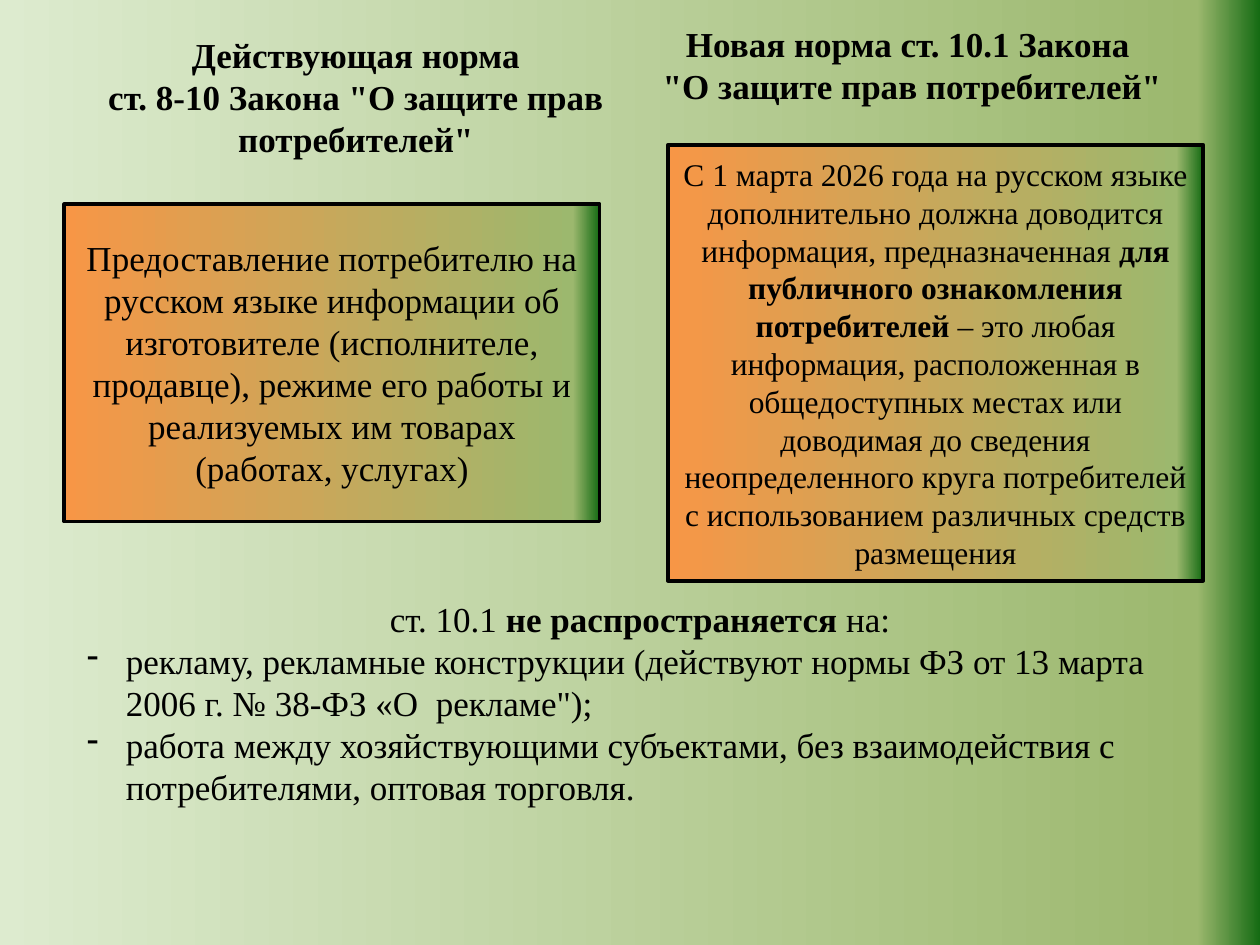
from lxml import etree
from pptx import Presentation
from pptx.dml.color import RGBColor
from pptx.enum.shapes import MSO_SHAPE
from pptx.enum.text import MSO_ANCHOR, PP_ALIGN
from pptx.oxml.ns import qn
from pptx.util import Inches, Pt

RECTANGLE = MSO_SHAPE.RECTANGLE
MIDDLE = MSO_ANCHOR.MIDDLE
CENTER, LEFT = PP_ALIGN.CENTER, PP_ALIGN.LEFT
FONT = "Times New Roman"
BLACK = "000000"
GRID = Inches(0.1)
INDENT = Inches(0.31)
SLIDE_STARTS, CARD_STARTS = "DDEBCF", "F79646"


def color(value):
    """Turn a hex string into a colour."""
    return RGBColor.from_string(value)


def place(box):
    """Turn grid columns and rows into slide lengths."""
    return [round(GRID * cells) for cells in box]


def fill_gradient(fill, owner, start):
    """Fade from the start colour through olive to dark green at the right edge."""
    fill.gradient()
    fill.gradient_angle = 0
    stops = owner.find(".//" + qn("a:gsLst"))
    for stop in list(stops):
        stops.remove(stop)
    for percent, value in ((0, start), (95, "9CB86E"), (100, "156B13")):
        stop = etree.SubElement(stops, qn("a:gs"), pos=str(percent * 1000))
        etree.SubElement(stop, qn("a:srgbClr"), val=value)


def write(paragraph, pieces, size=20, align=CENTER):
    """Write (text, bold) pieces into a paragraph."""
    paragraph.alignment = align
    for text, bold in pieces:
        run = paragraph.add_run()
        run.text = text
        run.font.name, run.font.size, run.font.bold = FONT, Pt(size), bold
        run.font.color.rgb = color(BLACK)


def add_dash(paragraph):
    """Give a paragraph a hanging dash bullet."""
    properties = paragraph._p.get_or_add_pPr()
    properties.set("marL", str(INDENT))
    properties.set("indent", str(-INDENT))
    etree.SubElement(properties, qn("a:buFontTx"))
    etree.SubElement(properties, qn("a:buChar"), char="-")


def add_text(slide, box, count):
    """Add a wrapping text box and return its paragraphs."""
    frame = slide.shapes.add_textbox(*place(box)).text_frame
    frame.word_wrap = True
    return [frame.paragraphs[0]] + [frame.add_paragraph() for _ in range(count - 1)]


def add_heading(slide, box, lines):
    """Add a bold centred heading."""
    for paragraph, line in zip(add_text(slide, box, len(lines)), lines):
        write(paragraph, [(line, True)])


def add_norm(slide, box, pieces, size):
    """Add a framed gradient card holding one legal norm."""
    card = slide.shapes.add_shape(RECTANGLE, *place(box))
    card.shadow.inherit = False
    fill_gradient(card.fill, card.element, CARD_STARTS)
    card.line.color.rgb = color(BLACK)
    card.line.width = Pt(2)
    card.text_frame.word_wrap = True
    card.text_frame.vertical_anchor = MIDDLE
    write(card.text_frame.paragraphs[0], pieces, size)


def add_exceptions(slide, box, intro, items):
    """Add the centred lead-in and its dashed list."""
    lead, *entries = add_text(slide, box, len(items) + 1)
    write(lead, intro)
    for entry, item in zip(entries, items):
        add_dash(entry)
        write(entry, [(item, False)], align=LEFT)


def main():
    """Build and save the slide."""
    deck = Presentation()
    deck.slide_width, deck.slide_height = place((100, 75))
    slide = deck.slides.add_slide(deck.slide_layouts[6])
    fill_gradient(slide.background.fill, slide.element, SLIDE_STARTS)

    add_heading(slide, (6.6, 2.2, 43.3, 11.1), [
        "Действующая норма",
        'ст. 8-10 Закона "О защите прав потребителей"',
    ])
    add_norm(slide, (5.1, 16.2, 42.5, 25.2), [
        ("Предоставление потребителю на русском языке информации об "
         "изготовителе (исполнителе, продавце), режиме его работы и "
         "реализуемых им товарах (работах, услугах)", False),
    ], 20)
    add_heading(slide, (50.8, 1.3, 42.5, 7.7), [
        "Новая норма ст. 10.1 Закона",
        ' "О защите прав потребителей"',
    ])
    add_norm(slide, (53, 11.5, 42.5, 34.6), [
        ("С 1 марта 2026 года на русском языке дополнительно должна "
         "доводится информация, предназначенная ", False),
        ("для публичного ознакомления потребителей", True),
        (" – это любая информация, расположенная в общедоступных местах "
         "или доводимая до сведения неопределенного круга потребителей "
         "с использованием различных средств размещения", False),
    ], 18)
    add_exceptions(
        slide, (5.9, 46.9, 89.8, 17.8),
        [("ст. 10.1 ", False), ("не распространяется ", True), ("на:", False)],
        ["рекламу, рекламные конструкции (действуют нормы ФЗ от 13 марта "
         '2006 г. № 38-ФЗ «О  рекламе");',
         "работа между хозяйствующими субъектами, без взаимодействия с "
         "потребителями, оптовая торговля."],
    )
    deck.save("out.pptx")


if __name__ == "__main__":
    main()
